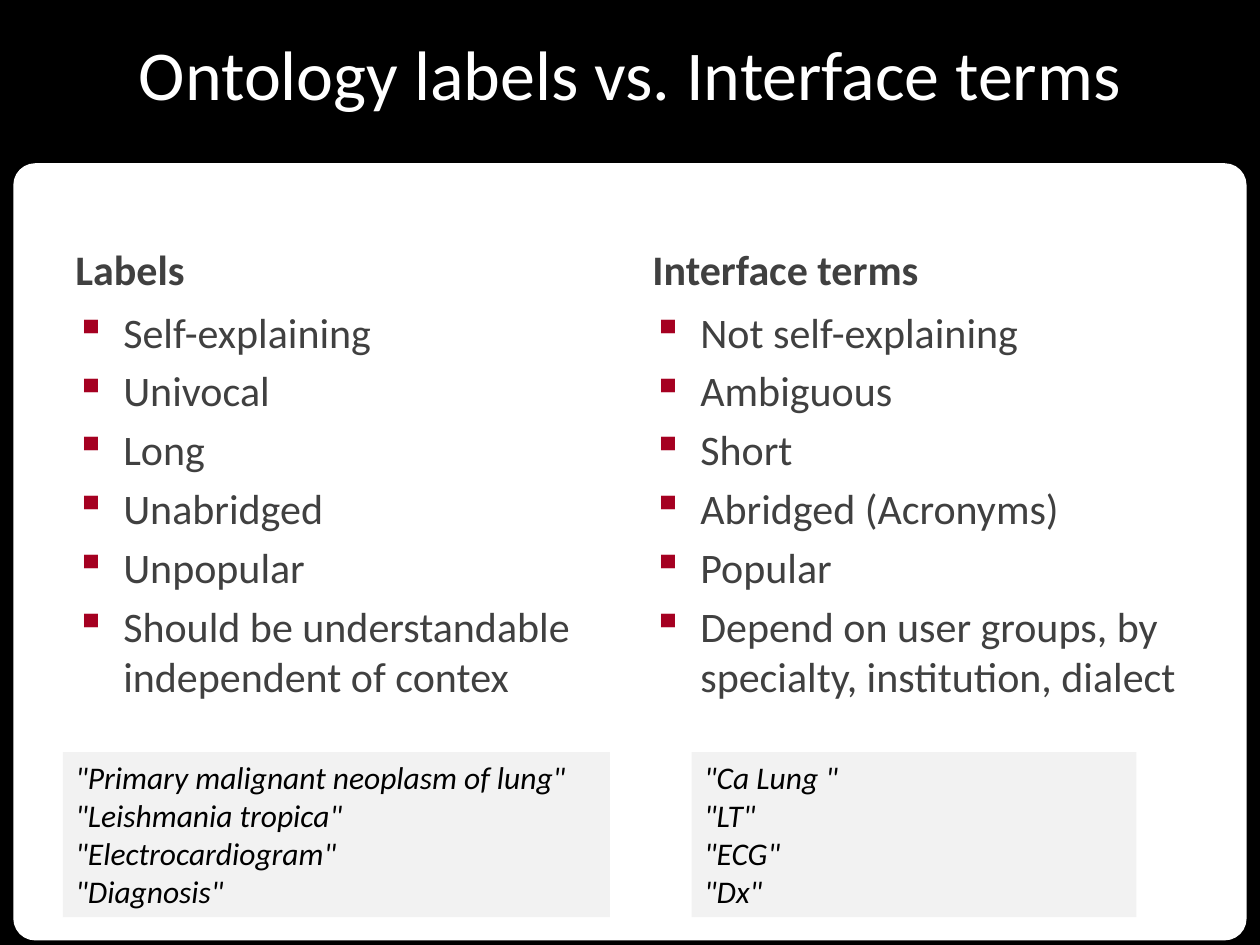
from lxml import etree
from pptx import Presentation
from pptx.dml.color import RGBColor
from pptx.enum.shapes import MSO_SHAPE
from pptx.enum.text import MSO_ANCHOR, PP_ALIGN
from pptx.oxml.ns import qn
from pptx.util import Inches, Pt

RECTANGLE, ROUNDED = MSO_SHAPE.RECTANGLE, MSO_SHAPE.ROUNDED_RECTANGLE
TOP, MIDDLE, BOTTOM = MSO_ANCHOR.TOP, MSO_ANCHOR.MIDDLE, MSO_ANCHOR.BOTTOM
LEFT, CENTER = PP_ALIGN.LEFT, PP_ALIGN.CENTER

WIDTH, HEIGHT = 10, 7.5
MARGIN = 0.05 * WIDTH
COLUMN_WIDTH = 4.42
HEADING_TOP, HEADING_HEIGHT = 1.68, 0.7
LIST_HEIGHT = 4.32
EXAMPLE_TOP, EXAMPLE_HEIGHT = 5.97, 1.31
INDENT = 0.38
FONT = "Calibri"
COLORS = {
    "black": "000000",
    "white": "FFFFFF",
    "text": "404040",
    "bullet": "A50021",
    "example": "F2F2F2",
}

COLUMNS = [
    {
        "left": MARGIN,
        "heading": "Labels",
        "points": ["Self-explaining", "Univocal", "Long", "Unabridged", "Unpopular",
                   "Should be understandable independent of contex"],
        "examples": ['"Primary malignant neoplasm of lung"', '"Leishmania tropica"',
                     '"Electrocardiogram"', '"Diagnosis"'],
        "example_box": (MARGIN, 4.34),
    },
    {
        "left": WIDTH - MARGIN - COLUMN_WIDTH,
        "heading": "Interface terms",
        "points": ["Not self-explaining", "Ambiguous", "Short", "Abridged (Acronyms)", "Popular",
                   "Depend on user groups, by specialty, institution, dialect"],
        "examples": ['"Ca Lung "', '"LT"', '"ECG"', '"Dx"'],
        "example_box": (5.49, 3.53),
    },
]


def color(name):
    return RGBColor.from_string(COLORS[name])


def add_panel(page, box, fill, kind=RECTANGLE):
    panel = page.shapes.add_shape(kind, *map(Inches, box))
    panel.shadow.inherit = False
    panel.fill.solid()
    panel.fill.fore_color.rgb = color(fill)
    panel.line.fill.background()
    return panel


def add_bullet(para):
    properties = para._p.get_or_add_pPr()
    properties.set("marL", str(Inches(INDENT)))
    properties.set("indent", str(-Inches(INDENT)))
    bullet_color = etree.SubElement(properties, qn("a:buClr"))
    etree.SubElement(bullet_color, qn("a:srgbClr"), val=COLORS["bullet"])
    etree.SubElement(properties, qn("a:buChar"), char="▪")


def write(shape, lines, size=24, ink="text", bold=False, italic=False,
          align=LEFT, anchor=TOP, before=0, bullets=False):
    frame = shape.text_frame
    frame.word_wrap = True
    frame.vertical_anchor = anchor
    for index, line in enumerate(lines):
        para = frame.paragraphs[0] if index == 0 else frame.add_paragraph()
        para.alignment = align
        para.space_before = Pt(before)
        if bullets:
            add_bullet(para)
        span = para.add_run()
        span.text = line
        span.font.name = FONT
        span.font.size = Pt(size)
        span.font.bold = bold
        span.font.italic = italic
        span.font.color.rgb = color(ink)


def add_text(page, box, lines, **text_format):
    write(page.shapes.add_textbox(*map(Inches, box)), lines, **text_format)


def add_background(page, box):
    page.background.fill.solid()
    page.background.fill.fore_color.rgb = color("black")
    card = add_panel(page, box, "white", ROUNDED)
    card.adjustments[0] = 0.026
    card.line.color.rgb = color("white")
    card.line.width = Pt(2)


def add_title(page, box, title):
    write(add_panel(page, box, "black"), [title], size=40, ink="white",
          align=CENTER, anchor=MIDDLE)


def add_column(page, box, heading, points):
    left, top, width, height = box
    # Heading sits on the bottom edge of its band
    add_text(page, (left, top, width, HEADING_HEIGHT), [heading],
             bold=True, anchor=BOTTOM, before=4.8)
    # Bulleted list fills the rest
    add_text(page, (left, top + HEADING_HEIGHT, width, height - HEADING_HEIGHT), points,
             before=4.8, bullets=True)


def add_examples(page, box, examples):
    write(add_panel(page, box, "example"), examples, size=18, ink="black", italic=True)


def main():
    deck = Presentation()
    deck.slide_width, deck.slide_height = Inches(WIDTH), Inches(HEIGHT)
    page = deck.slides.add_slide(deck.slide_layouts[6])

    add_background(page, (0.12, 1.31, WIDTH - 2 * 0.12, 6.14))
    add_title(page, (0, 0, WIDTH, 1.15), "Ontology labels vs. Interface terms")
    for column in COLUMNS:
        column_box = (column["left"], HEADING_TOP, COLUMN_WIDTH, HEADING_HEIGHT + LIST_HEIGHT)
        add_column(page, column_box, column["heading"], column["points"])
    for column in COLUMNS:
        left, width = column["example_box"]
        add_examples(page, (left, EXAMPLE_TOP, width, EXAMPLE_HEIGHT), column["examples"])

    deck.save("out.pptx")


if __name__ == "__main__":
    main()
